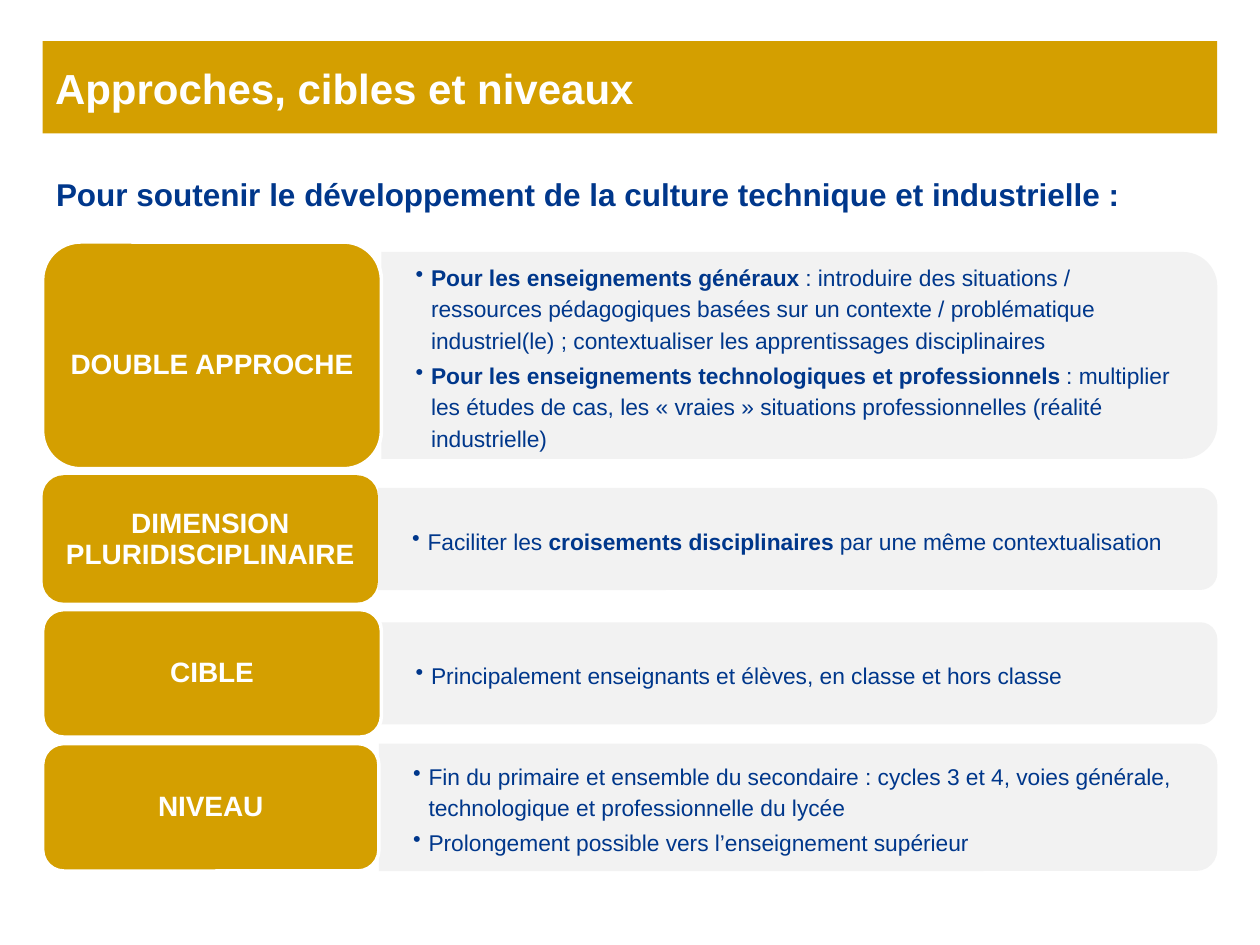
from collections import namedtuple

from lxml import etree
from pptx import Presentation
from pptx.dml.color import RGBColor
from pptx.enum.shapes import MSO_SHAPE
from pptx.enum.text import MSO_ANCHOR, PP_ALIGN
from pptx.oxml.ns import qn
from pptx.util import Cm, Pt

GOLD = RGBColor(0xD4, 0x9F, 0x00)
NAVY = RGBColor(0x00, 0x37, 0x8B)
GREY = RGBColor(0xF2, 0xF2, 0xF2)
WHITE = RGBColor(0xFF, 0xFF, 0xFF)

RECT = MSO_SHAPE.RECTANGLE
ROUNDED = MSO_SHAPE.ROUNDED_RECTANGLE
TOP_ROUNDED = MSO_SHAPE.ROUND_2_SAME_RECTANGLE
MIDDLE = MSO_ANCHOR.MIDDLE
LEFT, CENTER = PP_ALIGN.LEFT, PP_ALIGN.CENTER

FONT = "Arial"
MARGIN = 0.86
RIGHT_EDGE = 24.54
CORNER_INSET = 0.049  # share of a shape's height kept clear by its corners
BULLET_INDENT = Cm(0.31)

# Lengths in cm; each bullet is a list of (text, bold) pieces.
Row = namedtuple("Row", "label top width height panel_height spacing outlined bullets")

ROWS = [
    Row("DOUBLE APPROCHE", 4.88, 6.83, 4.57, 4.17, 1.5, True, [
        [("Pour les enseignements généraux ", True),
         (": introduire des situations / ressources pédagogiques basées sur un "
          "contexte / problématique industriel(le) ; contextualiser les "
          "apprentissages disciplinaires", False)],
        [("Pour les enseignements technologiques et professionnels ", True),
         (": multiplier les études de cas, les « vraies » situations "
          "professionnelles (réalité industrielle)", False)],
    ]),
    Row("DIMENSION PLURIDISCIPLINAIRE", 9.58, 6.76, 2.57, 2.06, Pt(18), False, [
        [("Faciliter les ", False), ("croisements disciplinaires ", True),
         ("par une même contextualisation", False)],
    ]),
    Row("CIBLE", 12.29, 6.83, 2.57, 2.06, 0.9, True, [
        [("Principalement enseignants et élèves, en classe et hors classe", False)],
    ]),
    Row("NIVEAU", 14.99, 6.78, 2.57, 2.57, 0.9, True, [
        [("Fin du primaire et ensemble du secondaire : cycles 3 et 4, voies "
          "générale, technologique et professionnelle du lycée", False)],
        [("Prolongement possible vers l’enseignement supérieur", False)],
    ]),
]


def add_box(s, kind, left, top, width, height, color):
    sp = s.shapes.add_shape(kind, Cm(left), Cm(top), Cm(width), Cm(height))
    sp.shadow.inherit = False
    sp.fill.solid()
    sp.fill.fore_color.rgb = color
    sp.line.fill.background()
    return sp


def add_text_frame(s, left, top, width, height, inset_x, inset_y):
    tf = s.shapes.add_textbox(Cm(left), Cm(top), Cm(width), Cm(height)).text_frame
    tf.word_wrap = True
    tf.vertical_anchor = MIDDLE
    tf.margin_left = tf.margin_right = Cm(inset_x)
    tf.margin_top = tf.margin_bottom = Cm(inset_y)
    return tf


def add_run(p, text, size, color, bold):
    r = p.add_run()
    r.text = text
    r.font.name = FONT
    r.font.size = Pt(size)
    r.font.bold = bold
    r.font.color.rgb = color


def add_bullet(p):
    pPr = p._p.get_or_add_pPr()
    pPr.set("marL", str(BULLET_INDENT))
    pPr.set("indent", str(-BULLET_INDENT))
    etree.SubElement(pPr, qn("a:buChar")).set("char", "•")


def add_title(s):
    sp = add_box(s, RECT, MARGIN, 0.83, 23.68, 1.86, GOLD)
    tf = sp.text_frame
    tf.vertical_anchor = MIDDLE
    p = tf.paragraphs[0]
    p.alignment = LEFT
    add_run(p, "Approches, cibles et niveaux", 24, WHITE, True)


def add_subtitle(s):
    tf = add_text_frame(s, 0.88, 3.4, 23.68, 1.03, 0.25, 0.13)
    add_run(tf.paragraphs[0],
            "Pour soutenir le développement de la culture technique et industrielle :",
            18, NAVY, True)


def add_panel(s, row):
    """Grey panel, rounded on the right, centred on the label's height."""
    left = MARGIN + row.width
    width, height = RIGHT_EDGE - left, row.panel_height
    top = row.top + (row.height - height) / 2
    # The rounded top side faces right after a quarter turn about the centre.
    shift = (width - height) / 2
    sp = add_box(s, TOP_ROUNDED, left + shift, top - shift, height, width, GREY)
    sp.rotation = 90

    inset = height * CORNER_INSET
    tf = add_text_frame(s, left, top + inset, width - inset, height - 2 * inset,
                        0.69, 0.35)
    for i, pieces in enumerate(row.bullets):
        p = tf.add_paragraph() if i else tf.paragraphs[0]
        p.level = 1
        p.line_spacing = Pt(18)
        p.space_after = Pt(2)
        add_bullet(p)
        for text, bold in pieces:
            add_run(p, text, 13, NAVY, bold)


def add_label(s, row):
    sp = add_box(s, ROUNDED, MARGIN, row.top, row.width, row.height, GOLD)
    if row.outlined:
        sp.line.color.rgb = WHITE
        sp.line.width = Pt(2)

    inset = row.height * CORNER_INSET
    tf = add_text_frame(s, MARGIN + inset, row.top + inset, row.width - 2 * inset,
                        row.height - 2 * inset, 0.17, 0.08)
    p = tf.paragraphs[0]
    p.alignment = CENTER
    p.line_spacing = row.spacing
    add_run(p, row.label, 16, WHITE, True)


def main():
    prs = Presentation()
    prs.slide_width, prs.slide_height = Cm(25.4), Cm(19.05)
    s = prs.slides.add_slide(prs.slide_layouts[6])
    add_title(s)
    for row in ROWS:
        add_panel(s, row)
        add_label(s, row)
    add_subtitle(s)
    prs.save("out.pptx")


if __name__ == "__main__":
    main()
